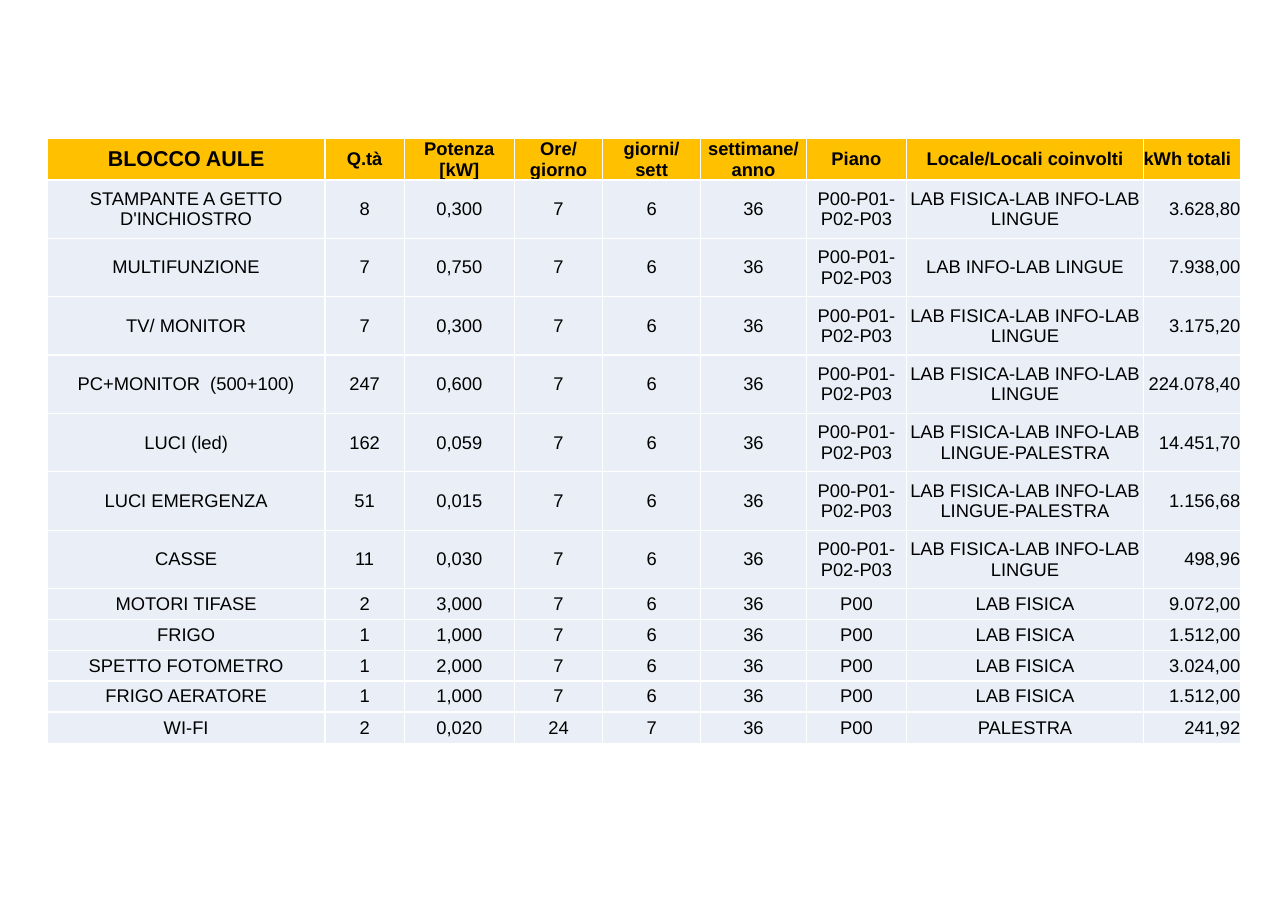
"""Build the slide listing the yearly energy use of the classroom block."""
from dataclasses import dataclass

from lxml.etree import SubElement
from pptx import Presentation
from pptx.dml.color import RGBColor
from pptx.enum.text import MSO_ANCHOR, PP_ALIGN
from pptx.oxml.ns import qn
from pptx.util import Inches, Pt


@dataclass(frozen=True)
class Theme:
    font: str = "Arial"
    ink: str = "000000"
    header: str = "FFC000"
    body: str = "EAEFF7"
    border: str = "FFFFFF"
    heading_size: int = 14
    text_size: int = 12
    border_width: int = 1


class SlideBuilder:
    def __init__(self, slide, theme):
        self.slide = slide
        self.theme = theme

    def table(self, left, top, widths, heights, rows):
        table = self.slide.shapes.add_table(
            len(rows), len(widths), Inches(left), Inches(top),
            Inches(sum(widths)), Inches(sum(heights))).table
        table.horz_banding = False
        for column, width in zip(table.columns, widths):
            column.width = Inches(width)
        for row, height in zip(table.rows, heights):
            row.height = Inches(height)
        last = len(widths) - 1
        for r, values in enumerate(rows):
            for c, value in enumerate(values):
                align = PP_ALIGN.CENTER
                if c == last:
                    align = PP_ALIGN.RIGHT if r else PP_ALIGN.LEFT
                self.cell(table.cell(r, c), value, align,
                          heading=r == 0, lead=r == c == 0)

    def cell(self, cell, value, align, heading, lead):
        theme = self.theme
        cell.margin_left = cell.margin_right = 0
        cell.margin_top = cell.margin_bottom = 0
        cell.vertical_anchor = MSO_ANCHOR.MIDDLE
        self.borders(cell)
        cell.fill.solid()
        cell.fill.fore_color.rgb = RGBColor.from_string(
            theme.header if heading else theme.body)
        frame = cell.text_frame
        for i, line in enumerate(value.split("\n")):
            paragraph = frame.add_paragraph() if i else frame.paragraphs[0]
            paragraph.alignment = align
            run = paragraph.add_run()
            run.text = line
            run.font.name = theme.font
            run.font.size = Pt(theme.heading_size if lead else theme.text_size)
            run.font.bold = heading
            run.font.color.rgb = RGBColor.from_string(theme.ink)

    def borders(self, cell):
        properties = cell._tc.get_or_add_tcPr()
        for side in ("a:lnL", "a:lnR", "a:lnT", "a:lnB"):
            line = SubElement(properties, qn(side),
                              w=str(Pt(self.theme.border_width)))
            fill = SubElement(line, qn("a:solidFill"))
            SubElement(fill, qn("a:srgbClr"), val=self.theme.border)


HEADER = ("BLOCCO AULE", "Q.tà", "Potenza\n[kW]", "Ore/\ngiorno",
          "giorni/\nsett", "settimane/\nanno", "Piano",
          "Locale/Locali coinvolti", "kWh totali")
SCHOOL_HOURS = ("7", "6", "36")
ALL_FLOORS = "P00-P01-P02-P03"
GROUND = "P00"
PHYSICS = "LAB FISICA"
LABS = "LAB FISICA-LAB INFO-LAB LINGUE"
LABS_AND_GYM = LABS + "-PALESTRA"

DEVICES = (
    ("STAMPANTE A GETTO D'INCHIOSTRO", "8", "0,300", *SCHOOL_HOURS, ALL_FLOORS, LABS, "3.628,80"),
    ("MULTIFUNZIONE", "7", "0,750", *SCHOOL_HOURS, ALL_FLOORS, "LAB INFO-LAB LINGUE", "7.938,00"),
    ("TV/ MONITOR", "7", "0,300", *SCHOOL_HOURS, ALL_FLOORS, LABS, "3.175,20"),
    ("PC+MONITOR  (500+100)", "247", "0,600", *SCHOOL_HOURS, ALL_FLOORS, LABS, "224.078,40"),
    ("LUCI (led)", "162", "0,059", *SCHOOL_HOURS, ALL_FLOORS, LABS_AND_GYM, "14.451,70"),
    ("LUCI EMERGENZA", "51", "0,015", *SCHOOL_HOURS, ALL_FLOORS, LABS_AND_GYM, "1.156,68"),
    ("CASSE", "11", "0,030", *SCHOOL_HOURS, ALL_FLOORS, LABS, "498,96"),
    ("MOTORI TIFASE", "2", "3,000", *SCHOOL_HOURS, GROUND, PHYSICS, "9.072,00"),
    ("FRIGO", "1", "1,000", *SCHOOL_HOURS, GROUND, PHYSICS, "1.512,00"),
    ("SPETTO FOTOMETRO", "1", "2,000", *SCHOOL_HOURS, GROUND, PHYSICS, "3.024,00"),
    ("FRIGO AERATORE", "1", "1,000", *SCHOOL_HOURS, GROUND, PHYSICS, "1.512,00"),
    ("WI-FI", "2", "0,020", "24", "7", "36", GROUND, "PALESTRA", "241,92"),
)
WIDTHS = (2.52, 0.72, 1, 0.8, 0.89, 0.96, 0.91, 2.15, 0.88)
HEIGHTS = (0.31, *[0.53] * 7, *[0.28] * 4, 0.29)


def main():
    presentation = Presentation()
    presentation.slide_width = Inches(11.69)
    presentation.slide_height = Inches(8.27)
    blank = presentation.slide_layouts[6]
    builder = SlideBuilder(presentation.slides.add_slide(blank), Theme())
    builder.table(0.43, 1.26, WIDTHS, HEIGHTS, (HEADER, *DEVICES))
    presentation.save("out.pptx")


if __name__ == "__main__":
    main()
